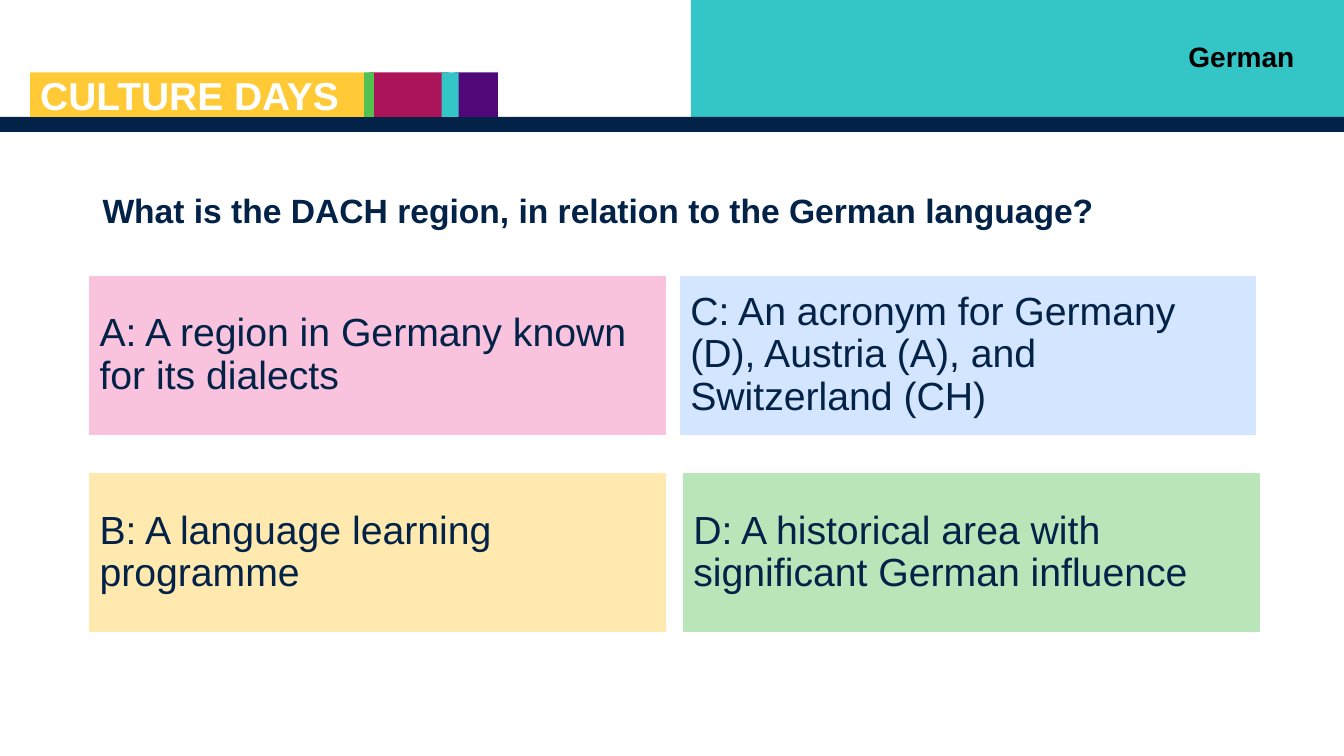
from pptx import Presentation
from pptx.dml.color import RGBColor
from pptx.enum import shapes, text
from pptx.util import Pt

NAVY, TEAL, YELLOW, WHITE = "032248", "34C6C6", "FFCA36", "FFFFFF"

deck = Presentation()
deck.slide_width, deck.slide_height = Pt(960), Pt(540)
page = deck.slides.add_slide(deck.slide_layouts[6])


def add_block(left, top, width, height, color, outlined=False):
    block = page.shapes.add_shape(
        shapes.MSO_SHAPE.RECTANGLE, Pt(left), Pt(top), Pt(width), Pt(height))
    block.shadow.inherit = False
    block.fill.solid()
    block.fill.fore_color.rgb = RGBColor.from_string(color)
    if outlined:
        block.line.color.rgb = RGBColor.from_string(color)
        block.line.width = Pt(0.75)
    else:
        block.line.fill.background()
    return block


def write(box, words, size, color=NAVY, bold=False, spacing=0.9,
          align=text.PP_ALIGN.LEFT, anchor=text.MSO_ANCHOR.MIDDLE):
    frame = box.text_frame
    frame.word_wrap = True
    frame.vertical_anchor = anchor
    para = frame.paragraphs[0]
    para.alignment = align
    para.line_spacing = spacing
    span = para.add_run()
    span.text = words
    span.font.name = "Arial"
    span.font.size = Pt(size)
    span.font.bold = bold
    span.font.color.rgb = RGBColor.from_string(color)


# Header band
add_block(493.6, 0, 466.4, 83.5, TEAL)
add_block(0, 83.5, 960, 10.8, NAVY)

# Coloured stripes behind the series name
stripes = [
    (324.7, 31, "500778"),
    (263.5, 56.9, "AC145A"),
    (315.4, 12.2, TEAL),
    (259.9, 7.2, "52C152"),
    (21.6, 238.3, YELLOW),
]
for left, width, color in stripes:
    add_block(left, 51.8, width, 31.7, color)

series = page.shapes.add_textbox(Pt(21.6), Pt(54), Pt(298.8), Pt(34.6))
write(series, "CULTURE DAYS", 27.8, WHITE, bold=True, spacing=0.8,
      anchor=text.MSO_ANCHOR.TOP)

language = page.shapes.add_textbox(Pt(547.9), Pt(24.5), Pt(383.8), Pt(31.7))
write(language, "German", 20, "000000", bold=True, spacing=1,
      align=text.PP_ALIGN.RIGHT, anchor=text.MSO_ANCHOR.TOP)

# Question and its four answers
question = page.shapes.add_textbox(Pt(66.2), Pt(119.5), Pt(828), Pt(64.8))
write(question, "What is the DACH region, in relation to the German language?",
      24, bold=True)

upper, lower = 197.3, 338.4
answers = [
    (64, upper, "F9C3DD", "A: A region in Germany known for its dialects"),
    (486, upper, "D3E5FF",
     "C: An acronym for Germany (D), Austria (A), and Switzerland (CH)"),
    (64, lower, "FFE9AE", "B: A language learning programme"),
    (488.2, lower, "B9E5B9",
     "D: A historical area with significant German influence"),
]
for left, top, color, words in answers:
    answer = add_block(left, top, 411.1, 113, color, outlined=True)
    write(answer, words, 28)

deck.save("out.pptx")
